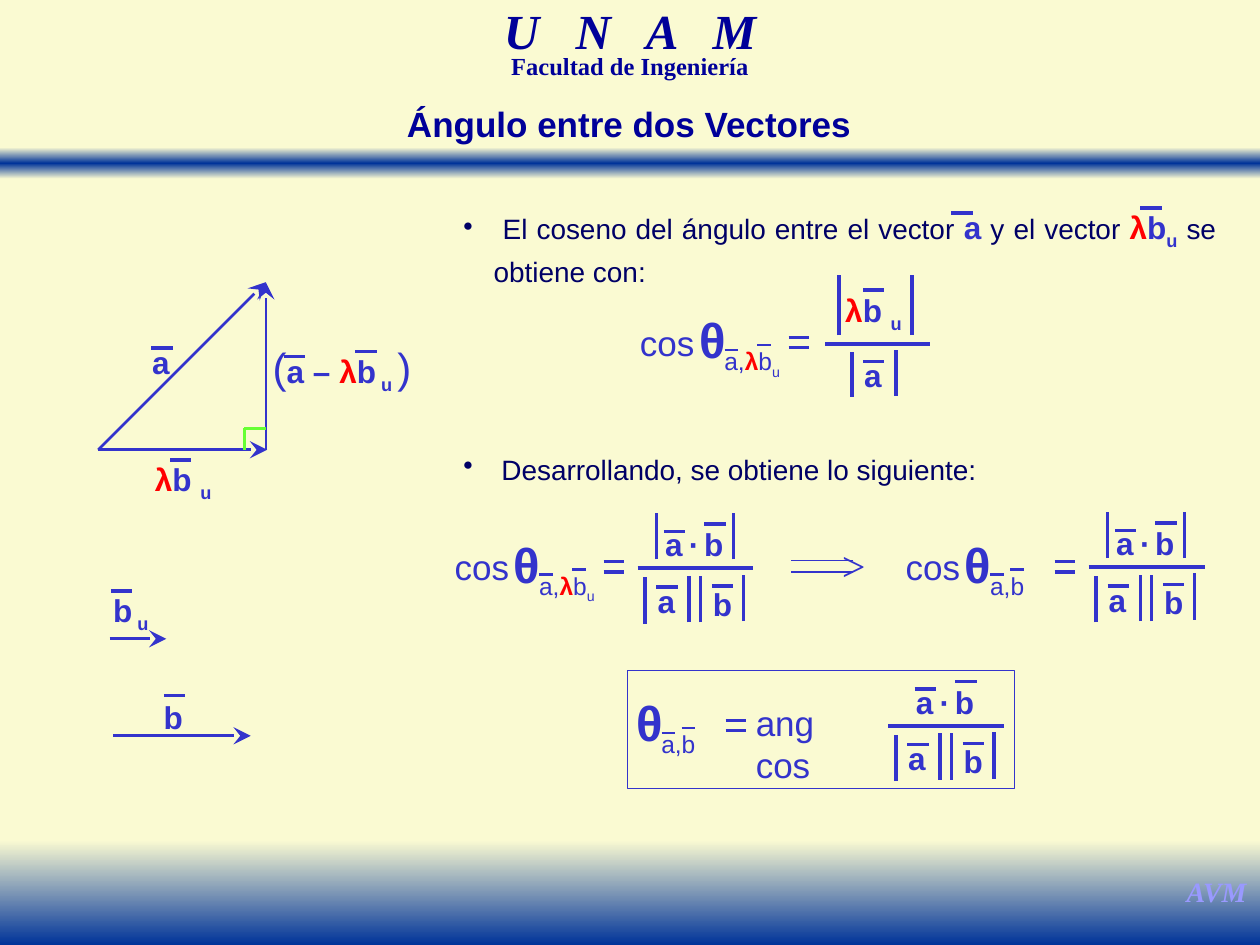
from copy import deepcopy
from pptx import Presentation
from pptx.dml.color import RGBColor
from pptx.enum.shapes import MSO_CONNECTOR, MSO_SHAPE
from pptx.enum.text import MSO_ANCHOR, MSO_AUTO_SIZE, PP_ALIGN
from pptx.oxml.ns import qn
from pptx.oxml.xmlchemy import OxmlElement
from pptx.util import Inches, Pt

LINE, RECT = MSO_CONNECTOR.STRAIGHT, MSO_SHAPE.RECTANGLE
TOP, GROW = MSO_ANCHOR.TOP, MSO_AUTO_SIZE.SHAPE_TO_FIT_TEXT
MID, JUST = PP_ALIGN.CENTER, PP_ALIGN.JUSTIFY
SANS, SERIF = "Arial", "Times New Roman"
HUES = {"cream": "FAFAD2", "deep": "003399", "navy": "000099", "ink": "000066",
        "blue": "3333CC", "red": "FF0000", "green": "66FF33", "lilac": "9999FF"}
RGB = {key: RGBColor.from_string(val) for key, val in HUES.items()}

deck = Presentation()
deck.slide_width, deck.slide_height = Inches(10), Inches(7.5)
slide = deck.slides.add_slide(deck.slide_layouts[5])
slide.background.fill.solid()
slide.background.fill.fore_color.rgb = RGB["cream"]
shapes = slide.shapes


def write(box, runs, align=JUST, face=SANS, wrap=False, gap=None, bullet=False, shape=None):
    shape = shape or shapes.add_textbox(0, 0, 0, 0)
    for key, val in zip(("left", "top", "width", "height"), box):
        setattr(shape, key, Inches(val))
    frame = shape.text_frame
    for key, val in {"word_wrap": wrap, "auto_size": GROW, "vertical_anchor": TOP}.items():
        setattr(frame, key, val)
    para = frame.paragraphs[0]
    para.alignment = align
    if gap:
        para.line_spacing = gap
    if bullet:
        props = para._p.get_or_add_pPr()
        props.set("marL", str(Inches(0.24)))
        props.set("indent", str(-Inches(0.24)))
        mark = OxmlElement("a:buChar")
        mark.set("char", "•")
        props.append(mark)
    for words, size, hue, marks in runs:
        run = para.add_run()
        run.text = words
        look = {"name": face, "size": Pt(size), "bold": "b" in marks, "italic": "i" in marks}
        for key, val in look.items():
            setattr(run.font, key, val)
        run.font.color.rgb = RGB[hue]
        if "s" in marks:
            run._r.get_or_add_rPr().set("baseline", "-25000")
    return para


def rule(x1, y1, x2, y2, width=2, hue="blue", arrow=False):
    line = shapes.add_connector(LINE, *[Inches(val) for val in (x1, y1, x2, y2)])
    line.line.width = Pt(width)
    line.line.color.rgb = RGB[hue]
    props = line._element.spPr
    if arrow:
        tip = OxmlElement("a:tailEnd")
        for key, val in {"type": "stealth", "w": "lg", "len": "lg"}.items():
            tip.set(key, val)
        props.find(qn("a:ln")).append(tip)
    props.append(OxmlElement("a:effectLst"))


for top, high, stops in [(1.17, 0.25, ("cream", "deep", "cream")),
                         (6.67, 0.83, ("cream", "deep"))]:
    band = shapes.add_shape(RECT, 0, Inches(top), Inches(10), Inches(high))
    band.shadow.inherit = False
    band.line.fill.background()
    band.fill.gradient()
    band.fill.gradient_angle = 270
    ramp = band._element.spPr.find(".//" + qn("a:gsLst"))
    if len(stops) > len(ramp):
        ramp.insert(1, deepcopy(ramp[0]))
    for num, (stop, hue) in enumerate(zip(band.fill.gradient_stops, stops)):
        stop.position = num / (len(stops) - 1)
        stop.color.rgb = RGB[hue]

head = write((3.04, 0.08, 3.92, 0.43), [("U N A M", 28, "navy", "bi")],
             MID, SERIF, True, 0.7)
head.runs[0]._r.get_or_add_rPr().set("spc", "700")
write((3.21, 0.42, 3.58, 0.26), [("Facultad de Ingeniería", 14, "navy", "b")],
      MID, SERIF, True, 0.7)
write((9.31, 6.89, 0.69, 0.37), [("AVM", 16, "lilac", "bi")], MID, SERIF)
write((3.13, 0.76, 3.74, 0.43), [("Ángulo entre dos Vectores", 20, "navy", "b")],
      shape=shapes.title)

A, B, DOT = [[(sign + " ", 18, "blue", "b")] for sign in "ab·"]
LAM = ("λ", 18, "red", "b")
SUB = ("u ", 18, "blue", "bs")
LBU = [LAM, *B, SUB]

for x1, y1, x2, y2 in [(0.78, 3.57, 2.11, 2.24), (0.78, 3.57, 2.12, 3.57),
                       (2.11, 3.57, 2.11, 2.24), (0.9, 5.84, 1.99, 5.84),
                       (0.87, 5.07, 1.32, 5.07)]:
    rule(x1, y1, x2, y2, 1.5, arrow=True)
rule(2.11, 3.4, 1.94, 3.4, 1.5, "green")
rule(1.94, 3.4, 1.94, 3.57, 1.5, "green")

for box, runs in [
    ((1.11, 2.67, 0.41, 0.4), A),
    ((1.2, 5.49, 0.42, 0.4), B),
    ((0.8, 4.64, 0.57, 0.4), [("b", 18, "blue", "b"), (" u ", 18, "blue", "bs")]),
    ((1.13, 3.6, 0.71, 0.4), LBU),
    ((6.61, 2.26, 0.71, 0.4), LBU),
    ((6.76, 2.78, 0.41, 0.4), A),
]:
    write(box, runs)
write((2.05, 2.66, 1.33, 0.5),
      [("(", 24, "blue", ""), ("a – ", 18, "blue", "b"), LAM, ("b", 18, "blue", "b"),
       (" u ", 18, "blue", "bs"), (")", 24, "blue", "")], MID)

write((3.58, 1.57, 6.17, 0.72),
      [(" El coseno del ángulo entre el vector ", 16, "ink", ""), ("a", 18, "blue", "b"),
       (" y el vector ", 16, "ink", ""), LAM, ("b", 18, "blue", "b"),
       ("u", 18, "blue", "bs"), (" se obtiene con:", 16, "ink", "")],
      wrap=True, gap=1.1, bullet=True)
write((3.58, 3.54, 6.17, 0.37),
      [(" Desarrollando, se obtiene lo siguiente:", 16, "ink", "")], wrap=True, bullet=True)

for x, y in [(1.2, 2.76), (1.3, 5.52), (0.88, 4.69), (1.35, 3.65), (2.82, 2.79),
             (2.25, 2.83), (7.55, 1.69), (9.05, 1.65), (6.85, 2.3), (6.85, 2.87)]:
    rule(x, y, x + 0.17, y)

for x, y, scaled, cosine in [(5.45, 2.41, True, True), (3.98, 4.19, True, True),
                             (7.56, 4.19, False, True), (4.95, 5.45, False, False)]:
    write((x, y, 0.4, 0.57), [("θ", 28, "blue", "b")])
    if scaled:
        runs = [("a,", 14, "blue", ""), ("λ", 14, "red", "b"),
                ("b", 14, "blue", ""), ("u", 14, "blue", "s")]
    else:
        runs = [("a,b", 14, "blue", "")]
    write((x + 0.2, y + 0.29, 0.65 if scaled else 0.47, 0.33), runs)
    for dx, dy in [(0.3, 0.37), (0.56 if scaled else 0.46, 0.33)]:
        rule(x + dx, y + dy, x + dx + 0.11, y + dy, 1.25)
    for dy in (0.27, 0.35):
        rule(x + 0.81, y + dy, x + 0.97, y + dy, 1.75)
    if cosine:
        write((x - 0.47, y + 0.09, 0.63, 0.43), [("cos", 20, "blue", "")])
write((5.9, 5.52, 1.17, 0.43), [("ang cos", 20, "blue", "")])

rule(6.55, 2.73, 7.38, 2.73)
for x, top, end in [(6.66, 2.18, 2.66), (7.24, 2.18, 2.66),
                    (6.76, 2.79, 3.15), (7.11, 2.78, 3.14)]:
    rule(x, end, x, top)

for x, y, norm in [(5.06, 4.51, True), (8.64, 4.5, True), (7.05, 5.76, False)]:
    rule(x, y, x + 0.92, y)
    for dx, dy, wide, runs in [(0.06, 0.06, 0.41, A), (0.5, 0.08, 0.42, B),
                               (0.12, -0.39, 0.41, A), (0.43, -0.39, 0.42, B),
                               (0.31, -0.39, 0.34, DOT)]:
        write((x + dx, y + dy, wide, 0.4), runs)
    for dx, dy in [(0.15, 0.15), (0.59, 0.14), (0.21, -0.29), (0.53, -0.35)]:
        rule(x + dx, y + dy, x + dx + 0.17, y + dy)
    bars = [(0.06, 0.07), (0.41, 0.06), (0.5, 0.06), (0.84, 0.05)]
    if norm:
        bars += [(0.15, -0.44), (0.76, -0.44)]
    for dx, dy in bars:
        rule(x + dx, y + dy + 0.37, x + dx, y + dy)

for y in (4.45, 4.54):
    rule(6.28, y, 6.77, y, 0.75)
write((6.58, 4.23, 0.39, 0.5), [(">", 24, "blue", "")], MID, SERIF)

frame = shapes.add_shape(RECT, Inches(4.98), Inches(5.32), Inches(3.07), Inches(0.94))
frame.shadow.inherit = False
frame.fill.background()
frame.line.color.rgb = RGB["blue"]
frame.line.width = Pt(0.75)

deck.save("out.pptx")
